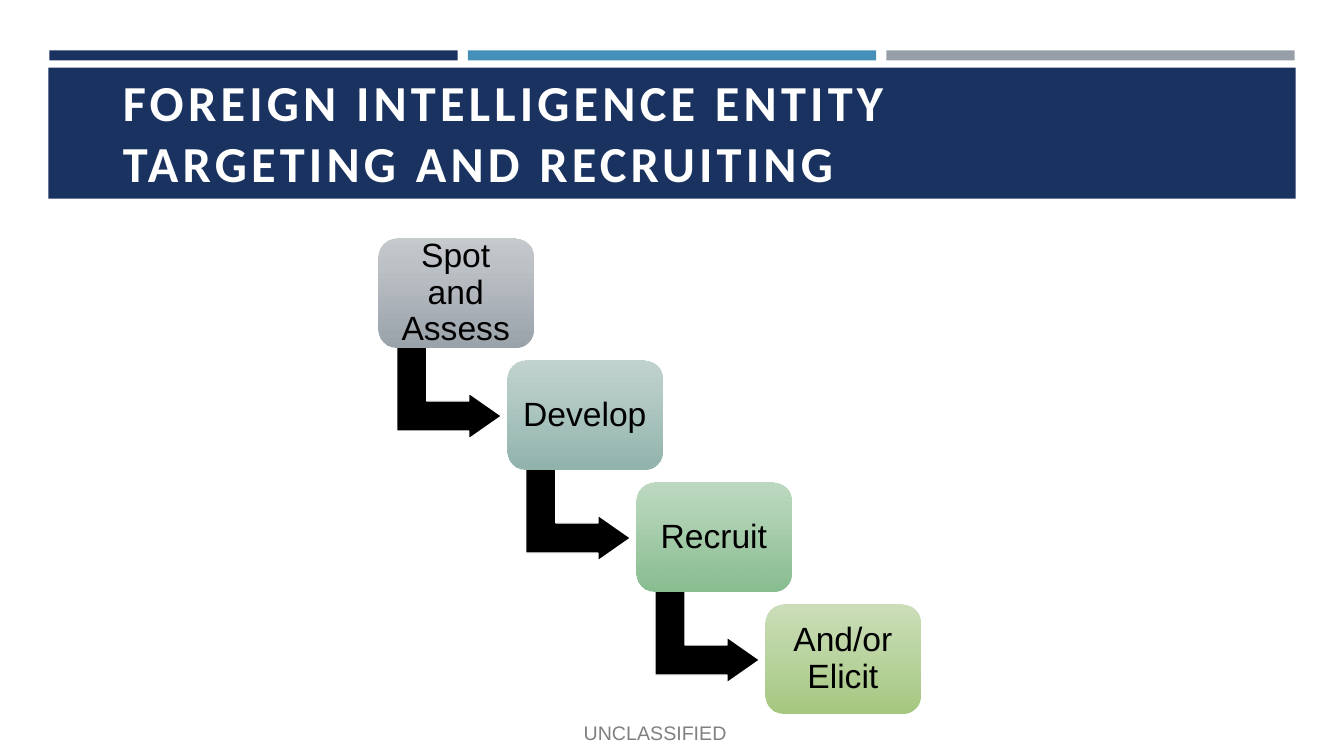
from dataclasses import dataclass

from lxml.etree import SubElement
from pptx import Presentation
from pptx.dml.color import RGBColor as Rgb
from pptx.enum.shapes import MSO_SHAPE as Shape
from pptx.enum.text import MSO_ANCHOR as Anchor, PP_ALIGN as Align
from pptx.oxml.ns import qn
from pptx.util import Inches, Pt


@dataclass(frozen=True)
class Theme:
    """Colours, fonts and type sizes of the slide."""
    navy: str = "1A3260"
    blue: str = "4590B8"
    grey: str = "969FA7"
    white: str = "FFFFFF"
    black: str = "000000"
    marking: str = "808080"
    title_font: str = "Calibri"
    body_font: str = "Arial"
    title_size: int = 36
    step_size: int = 24
    marking_size: int = 14


@dataclass(frozen=True)
class Grid:
    """Staircase and stripe spacing in inches."""
    left: float = 3.75
    top: float = 2.37
    column: float = 1.28
    row: float = 1.21
    stripe_left: float = 0.49
    stripe_column: float = 4.15

    def step(self, index, right=0, down=0):
        """Return the top left corner of a step, moved right and down."""
        return self.left + index * self.column + right, self.top + index * self.row + down


THEME = Theme()
GRID = Grid()
STRIPES = (THEME.navy, THEME.blue, THEME.grey)
STEPS = (
    ("Spot and Assess", "C0C5C9", "9BA3AB"),
    ("Develop", "BBCFCA", "92B4AD"),
    ("Recruit", "B6D5BA", "89BE90"),
    ("And/or Elicit", "C6DBB2", "A6C881"),
)


def add_block(slide, preset, left, top, width, height, color=None):
    """Add a preset shape without shadow or outline."""
    block = slide.shapes.add_shape(preset, *map(Inches, (left, top, width, height)))
    block.shadow.inherit = False
    block.line.fill.background()
    if color:
        block.fill.solid()
        block.fill.fore_color.rgb = Rgb.from_string(color)
    return block


def write(frame, wording, font_name, size, color, align=Align.LEFT, bold=False):
    """Write one styled paragraph into a text frame and return it."""
    paragraph = frame.paragraphs[0]
    paragraph.text = wording
    paragraph.alignment = align
    font = paragraph.font
    font.name, font.size, font.bold = font_name, Pt(size), bold
    font.color.rgb = Rgb.from_string(color)
    return paragraph


def add_title(slide, wording):
    """Add the letter-spaced title on its band."""
    add_block(slide, Shape.RECTANGLE, 0.48, 0.67, 12.37, 1.3, THEME.navy)
    title = slide.shapes.add_textbox(*map(Inches, (1.12, 0.77, 10.63, 1.08)))
    frame = title.text_frame
    frame.word_wrap = True
    frame.vertical_anchor = Anchor.MIDDLE
    heading = write(frame, wording, THEME.title_font, THEME.title_size, THEME.white, bold=True)
    heading.runs[0].font._element.set("spc", "300")


def add_step(slide, index, wording, light, dark):
    """Add one rounded step with its gradient and wording."""
    step = add_block(slide, Shape.ROUNDED_RECTANGLE, *GRID.step(index), 1.54, 1.08)
    step.adjustments[0] = 0.167
    step.fill.gradient()
    step.fill.gradient_angle = 270
    for stop, color in zip(step.fill.gradient_stops, (light, dark)):
        stop.color.rgb = Rgb.from_string(color)
    light_color = step._element.spPr.find(".//" + qn("a:srgbClr"))
    SubElement(light_color, qn("a:alpha"), val="90000")
    frame = step.text_frame
    frame.word_wrap = True
    frame.vertical_anchor = Anchor.MIDDLE
    frame.margin_left = frame.margin_right = Inches(0.09)
    frame.margin_top = frame.margin_bottom = Inches(0.1)
    label = write(frame, wording, THEME.body_font, THEME.step_size, THEME.black, Align.CENTER)
    label.line_spacing = 0.9


def add_bend(slide, index):
    """Add the bent arrow that leads to the next step."""
    corner = GRID.step(index, right=0.25, down=1.01)
    bend = add_block(slide, Shape.BENT_UP_ARROW, *corner, 0.91, 1.04, THEME.black)
    bend.rotation = 90
    for position, value in enumerate((0.328, 0.25, 0.358)):
        bend.adjustments[position] = value
    bend.line.color.rgb = Rgb.from_string(THEME.white)
    bend.line.width = Pt(1)


def add_marking(slide, wording):
    """Add the classification marking at the foot."""
    marking = slide.shapes.add_textbox(*map(Inches, (5.69, 7.1, 1.63, 0.34)))
    marking.text_frame.word_wrap = False
    write(marking.text_frame, wording, THEME.body_font, THEME.marking_size, THEME.marking)


def main():
    """Build and save the slide."""
    deck = Presentation()
    deck.slide_width, deck.slide_height = Inches(13.33), Inches(7.5)
    slide = deck.slides.add_slide(deck.slide_layouts[6])
    for index, color in enumerate(STRIPES):
        left = GRID.stripe_left + index * GRID.stripe_column
        add_block(slide, Shape.RECTANGLE, left, 0.5, 4.05, 0.1, color)
    add_title(slide, "FOREIGN INTELLIGENCE ENTITY TARGETING AND RECRUITING")
    for index, (wording, light, dark) in enumerate(STEPS):
        if index < len(STEPS) - 1:
            add_bend(slide, index)
        add_step(slide, index, wording, light, dark)
    add_marking(slide, "UNCLASSIFIED")
    deck.save("out.pptx")


if __name__ == "__main__":
    main()
